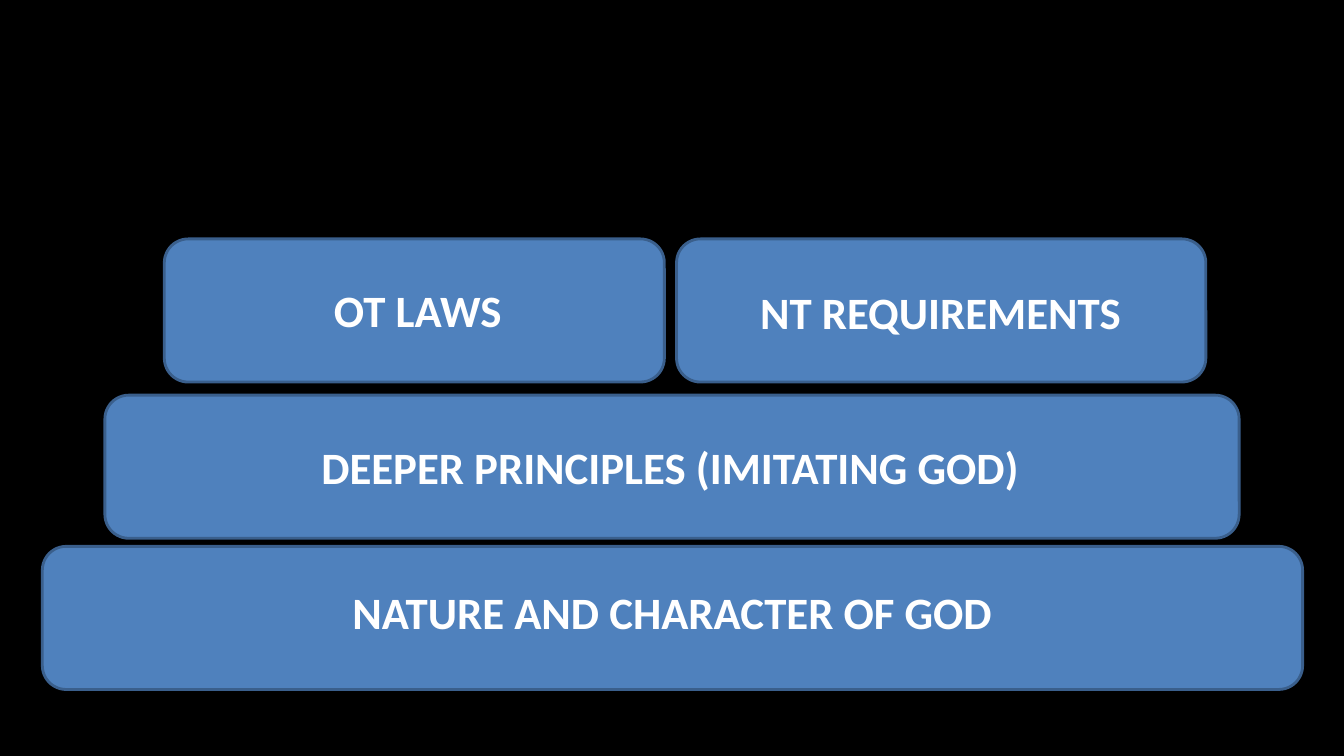
from dataclasses import dataclass

from pptx import Presentation
from pptx import util as u
from pptx.dml.color import RGBColor
from pptx.enum import shapes, text

COLOURS = {"background": "000000", "block": "4F81BD", "outline": "3A5F8C", "label": "FFFFFF"}
BLOCK_HEIGHT = 1.42
LABEL_HEIGHT = 0.64
LABEL_FORMAT = {"name": "Calibri", "size": u.Pt(32), "bold": True}


@dataclass
class Block:
    left: float
    top: float
    width: float
    label: str
    label_left: float
    label_top: float
    label_width: float = 8.58


# Foundation first, then each layer above it
BLOCKS = [
    Block(0.42, 5.42, 12.5, "NATURE AND CHARACTER OF GOD", 2.38, 5.75),
    Block(1.04, 3.92, 11.25, "DEEPER PRINCIPLES (IMITATING GOD)", 2.36, 4.31),
    Block(1.63, 2.37, 4.96, "OT LAWS", -0.04, 2.76, 8.37),
    Block(6.71, 2.37, 5.25, "NT REQUIREMENTS", 5.04, 2.78),
]


def colour(name: str) -> RGBColor:
    return RGBColor.from_string(COLOURS[name])


def draw_block(page, block: Block) -> None:
    box = page.shapes.add_shape(
        shapes.MSO_SHAPE.ROUNDED_RECTANGLE,
        u.Inches(block.left), u.Inches(block.top),
        u.Inches(block.width), u.Inches(BLOCK_HEIGHT),
    )
    box.shadow.inherit = False
    box.fill.solid()
    box.fill.fore_color.rgb = colour("block")
    box.line.color.rgb = colour("outline")
    box.line.width = u.Pt(2)


def draw_label(page, block: Block) -> None:
    box = page.shapes.add_textbox(
        u.Inches(block.label_left), u.Inches(block.label_top),
        u.Inches(block.label_width), u.Inches(LABEL_HEIGHT),
    )
    box.text_frame.word_wrap = True
    box.text_frame.auto_size = text.MSO_AUTO_SIZE.SHAPE_TO_FIT_TEXT
    para = box.text_frame.paragraphs[0]
    para.alignment = text.PP_ALIGN.CENTER
    span = para.add_run()
    span.text = block.label
    for attribute, value in LABEL_FORMAT.items():
        setattr(span.font, attribute, value)
    span.font.color.rgb = colour("label")


def main() -> None:
    deck = Presentation()
    deck.slide_width, deck.slide_height = u.Inches(13.33), u.Inches(7.5)
    page = deck.slides.add_slide(deck.slide_layouts[6])

    # Background
    page.background.fill.solid()
    page.background.fill.fore_color.rgb = colour("background")

    # Stacked blocks with their labels
    for block in BLOCKS:
        draw_block(page, block)
        draw_label(page, block)

    deck.save("out.pptx")


if __name__ == "__main__":
    main()
